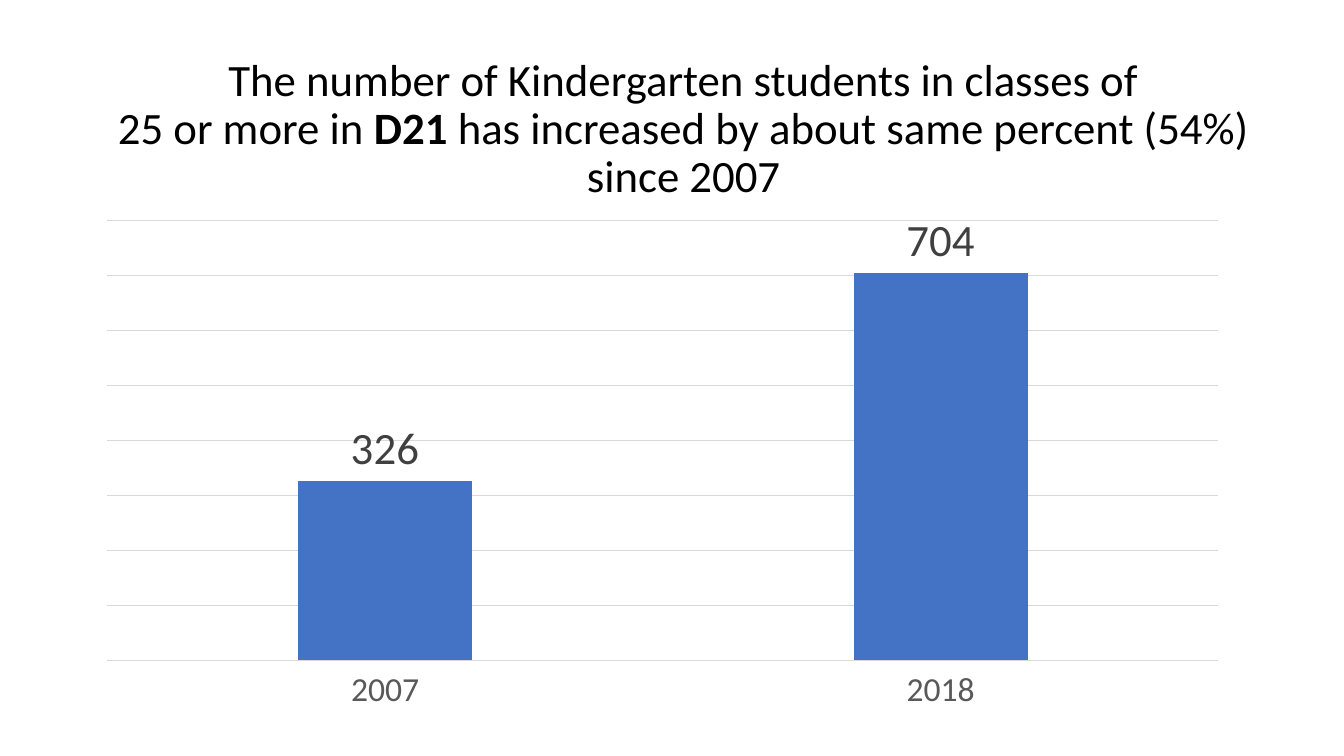
"""Builds a slide comparing Kindergarten students in large classes in 2007 and 2018."""
from lxml import etree
from pptx import Presentation
from pptx.chart.data import CategoryChartData
from pptx.dml.color import RGBColor
from pptx.enum.chart import XL_CHART_TYPE, XL_LABEL_POSITION, XL_TICK_LABEL_POSITION, XL_TICK_MARK
from pptx.enum.text import MSO_ANCHOR, PP_ALIGN
from pptx.oxml.ns import qn
from pptx.util import Cm, Pt

COLUMNS = XL_CHART_TYPE.COLUMN_CLUSTERED
OUTSIDE_END = XL_LABEL_POSITION.OUTSIDE_END
LOW = XL_TICK_LABEL_POSITION.LOW
NO_TICK = XL_TICK_MARK.NONE
MIDDLE = MSO_ANCHOR.MIDDLE
CENTER = PP_ALIGN.CENTER

FONT = "Calibri"
COLORS = {"title": "000000", "bar": "4472C4", "value": "404040", "year": "595959", "grid": "D9D9D9"}
STUDENTS = {"2007": 326, "2018": 704}
HEADLINE = [
    [("The number of Kindergarten students in classes of", False)],
    [("25 or more in ", False), ("D21", True),
     (" has increased by about same percent (54%) since 2007", False)],
]
PLOT_LAYOUT = {"layoutTarget": "inner", "xMode": "edge", "yMode": "edge",
               "x": 0.013, "y": 0.074, "w": 0.973, "h": 0.797}


def apply(target, **values):
    """Set each named attribute on the target."""
    for name, value in values.items():
        setattr(target, name, value)


def style_font(font, size, color, bold=False):
    """Give a font its face, size, weight and colour."""
    apply(font, name=FONT, size=Pt(size), bold=bold)
    font.color.rgb = RGBColor.from_string(COLORS[color])


def style_line(line):
    """Draw a thin grid-coloured line."""
    line.color.rgb = RGBColor.from_string(COLORS["grid"])
    line.width = Pt(0.75)


def add_headline(slide, left, top, width, height):
    """Place the centred headline in the given box."""
    frame = slide.shapes.add_textbox(left, top, width, height).text_frame
    apply(frame, word_wrap=True, vertical_anchor=MIDDLE)
    paragraph = frame.paragraphs[0]
    apply(paragraph, alignment=CENTER, line_spacing=0.9)
    for index, pieces in enumerate(HEADLINE):
        if index:
            paragraph.add_line_break()
        for text, bold in pieces:
            run = paragraph.add_run()
            run.text = text
            style_font(run.font, 32, "title", bold)


def set_plot_layout(chart):
    """Fix the inner plot area as fractions of the chart."""
    plot_area = chart.plots[0]._element.getparent()
    layout = plot_area.find(qn("c:layout"))
    if layout is None:
        layout = etree.Element(qn("c:layout"))
        plot_area.insert(0, layout)
    manual = etree.SubElement(layout, qn("c:manualLayout"))
    for name, value in PLOT_LAYOUT.items():
        etree.SubElement(manual, qn(f"c:{name}")).set("val", str(value))


def add_student_chart(slide, left, top, width, height):
    """Place the column chart of student counts in the given box."""
    data = CategoryChartData()
    data.categories = list(STUDENTS)
    data.add_series("Series 1", list(STUDENTS.values()))
    chart = slide.shapes.add_chart(COLUMNS, left, top, width, height, data).chart
    apply(chart, has_title=False, has_legend=False)
    style_font(chart.font, 10, "title")
    set_plot_layout(chart)

    plot = chart.plots[0]
    apply(plot, gap_width=219, overlap=-27, vary_by_categories=False, has_data_labels=True)
    apply(plot.data_labels, show_value=True, position=OUTSIDE_END)
    style_font(plot.data_labels.font, 32, "value")
    bars = plot.series[0].format.fill
    bars.solid()
    bars.fore_color.rgb = RGBColor.from_string(COLORS["bar"])

    years = chart.category_axis
    apply(years, major_tick_mark=NO_TICK, minor_tick_mark=NO_TICK, tick_label_position=LOW)
    style_font(years.tick_labels.font, 24, "year")
    style_line(years.format.line)
    counts = chart.value_axis
    apply(counts, visible=False, has_major_gridlines=True,
          minimum_scale=0, maximum_scale=800, major_unit=100)
    style_line(counts.major_gridlines.format.line)


def main():
    """Build the slide and save it."""
    deck = Presentation()
    apply(deck, slide_width=Cm(33.87), slide_height=Cm(19.05))
    slide = deck.slides.add_slide(deck.slide_layouts[6])
    add_headline(slide, Cm(2.33), Cm(0.99), Cm(29.8), Cm(4.57))
    add_student_chart(slide, Cm(2.33), Cm(4.52), Cm(28.78), Cm(13.92))
    deck.save("out.pptx")


if __name__ == "__main__":
    main()
